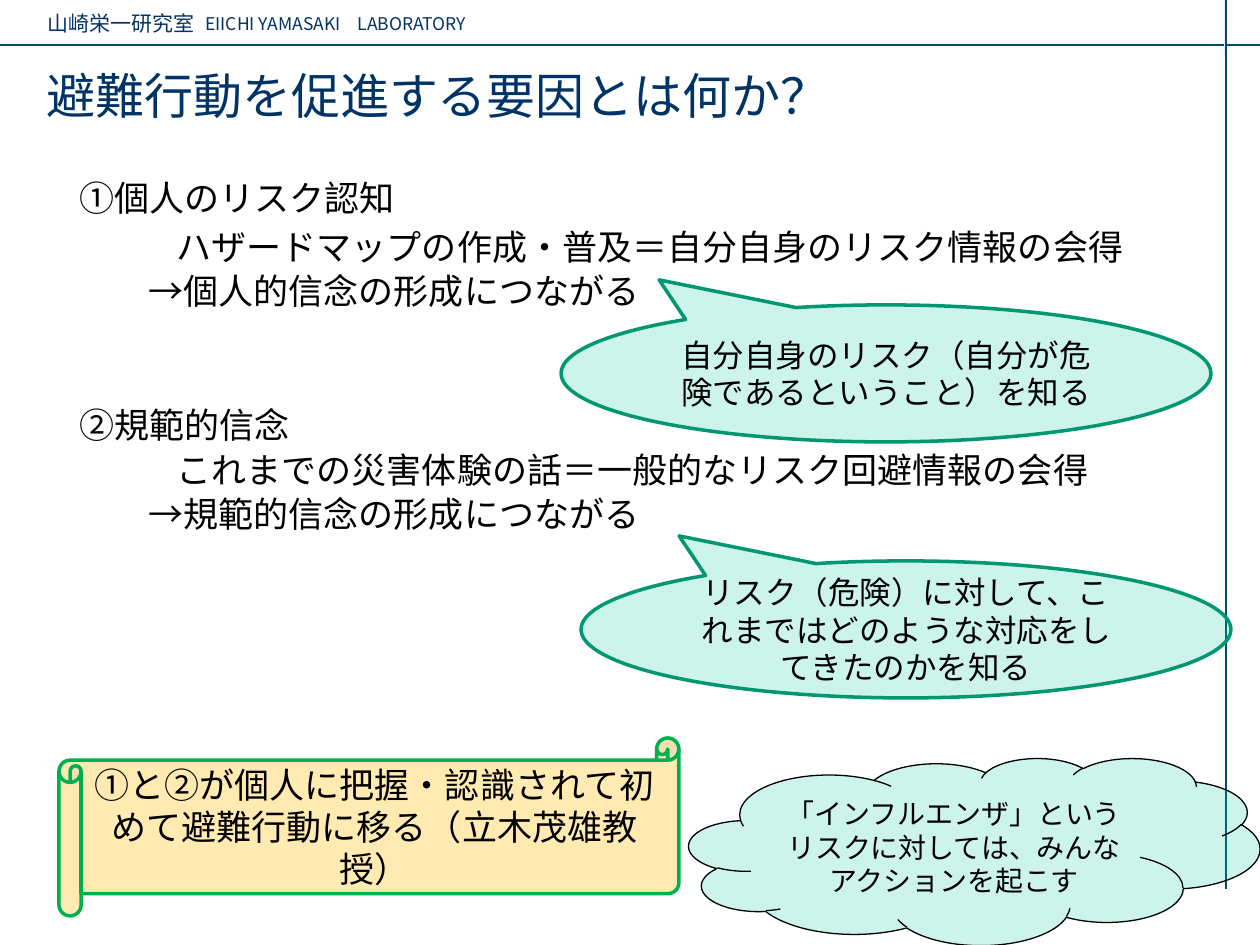
"""Build the slide on what drives evacuation behaviour."""
from lxml import etree
from pptx import Presentation
from pptx import util as u
from pptx.dml.color import RGBColor
from pptx.enum import shapes, text
from pptx.oxml import ns

PX = 914400 // 126
THEME = {
    "navy": "003366", "rule": "024D6E", "pale": "EEEEEE", "ink": "000000",
    "mint": "00CC99", "teal": "009771", "gold": "FFC000", "green": "00B050",
    "serif": "Times New Roman", "sans": "Noto Sans CJK JP",
    "title": 28, "body": 20, "call": 18, "cloud": 16, "lab": 12, "sub": 10,
    "pitch": 25.5,
}
TITLE = "避難行動を促進する要因とは何か？"
HEADS = [
    ("山崎栄一研究室", (35, 4, 387, 38), "lab", "serif"),
    ("EIICHI YAMASAKI　LABORATORY", (193, 6, 714, 34), "sub", "sans"),
]
RULES = [
    ((0, 45, 1260, 45), "rule", 1.5),
    ((1225, 55, 1225, 0), "pale", 0.75),
    ((1226, 0, 1226, 889), "rule", 0.75),
]
BODY = [
    ("①個人のリスク認知", 8, 0),
    ("ハザードマップの作成・普及＝自分自身のリスク情報の会得", 105, 2),
    ("→個人的信念の形成につながる", 77, 0),
    ("②規範的信念", 8, 51),
    ("これまでの災害体験の話＝一般的なリスク回避情報の会得", 105, 0),
    ("→規範的信念の形成につながる", 77, 0),
]
CALL = shapes.MSO_SHAPE.OVAL_CALLOUT
TAIL = (-0.349, -0.683)
NOTES = [
    (CALL, (561, 305, 650, 137), TAIL, ("mint", 20), ("teal", 2), "call",
     "自分自身のリスク（自分が危険であるということ）を知る"),
    (CALL, (581, 561, 650, 137), TAIL, ("mint", 20), ("teal", 2), "call",
     "リスク（危険）に対して、これまではどのような対応をしてきたのかを知る"),
    (shapes.MSO_SHAPE.HORIZONTAL_SCROLL, (59, 738, 620, 178), (),
     ("gold", 30), ("green", 2), "body",
     "①と②が個人に把握・認識されて初めて避難行動に移る（立木茂雄教授）"),
    (shapes.MSO_SHAPE.CLOUD, (689, 758, 571, 187), (),
     ("mint", 20), ("ink", 0.75), "cloud",
     "「インフルエンザ」というリスクに対しては、みんなアクションを起こす"),
]


def emu(*vals):
    return [v * PX for v in vals]


def tone(name):
    return RGBColor.from_string(THEME[name])


def put(obj, **vals):
    for key, val in vals.items():
        setattr(obj, key, val)


def place(shape, box):
    put(shape, **dict(zip(("left", "top", "width", "height"), emu(*box))))


def frame(shape, anchor=text.MSO_ANCHOR.MIDDLE):
    tf = shape.text_frame
    put(tf, word_wrap=True, auto_size=text.MSO_AUTO_SIZE.NONE,
        vertical_anchor=anchor)
    return tf


def write(para, words, size, face, color, align=text.PP_ALIGN.LEFT):
    run = para.add_run()
    run.text = words
    para.alignment = align
    put(run.font, size=u.Pt(THEME[size]), name=THEME[face])
    run.font.color.rgb = tone(color)
    east = etree.SubElement(run.font._element, ns.qn("a:ea"))
    east.set("typeface", THEME["sans"])


def stroke(line, color, width):
    line.color.rgb = tone(color)
    line.width = u.Pt(width)


def rule(slide, ends, color, width):
    line = slide.shapes.add_connector(
        shapes.MSO_CONNECTOR.STRAIGHT, *emu(*ends))
    stroke(line.line, color, width)
    etree.SubElement(line._element.spPr, ns.qn("a:effectLst"))


def points(shape):
    tf = frame(shape, text.MSO_ANCHOR.TOP)
    for i, (words, left, gap) in enumerate(BODY):
        para = tf.add_paragraph() if i else tf.paragraphs[0]
        props = para._p.get_or_add_pPr()
        props.set("marL", str(left * PX))
        props.set("indent", "0")
        etree.SubElement(props, ns.qn("a:buNone"))
        put(para, line_spacing=u.Pt(THEME["pitch"]), space_before=u.Pt(gap))
        write(para, words, "body", "serif", "ink")


def note(slide, kind, box, adj, fill, line, size, words):
    shape = slide.shapes.add_shape(kind, *emu(*box))
    for i, val in enumerate(adj):
        shape.adjustments[i] = val
    shape.shadow.inherit = False
    shape.fill.solid()
    shape.fill.fore_color.rgb = tone(fill[0])
    color = shape._element.spPr.find(".//" + ns.qn("a:srgbClr"))
    etree.SubElement(color, ns.qn("a:alpha")).set("val", str(fill[1] * 1000))
    stroke(shape.line, *line)
    write(frame(shape).paragraphs[0], words, size, "serif", "ink",
          text.PP_ALIGN.CENTER)


def main():
    prs = Presentation()
    put(prs, slide_width=1260 * PX, slide_height=945 * PX)
    slide = prs.slides.add_slide(prs.slide_layouts[1])
    title, body = slide.placeholders
    place(title, (34, 59, 1160, 72))
    write(frame(title).paragraphs[0], TITLE, "title", "sans", "navy")
    place(body, (59, 168, 1172, 386))
    points(body)
    for words, box, size, face in HEADS:
        head = slide.shapes.add_textbox(*emu(*box))
        write(frame(head).paragraphs[0], words, size, face, "navy")
    for item in RULES:
        rule(slide, *item)
    for item in NOTES:
        note(slide, *item)
    prs.save("out.pptx")


if __name__ == "__main__":
    main()
